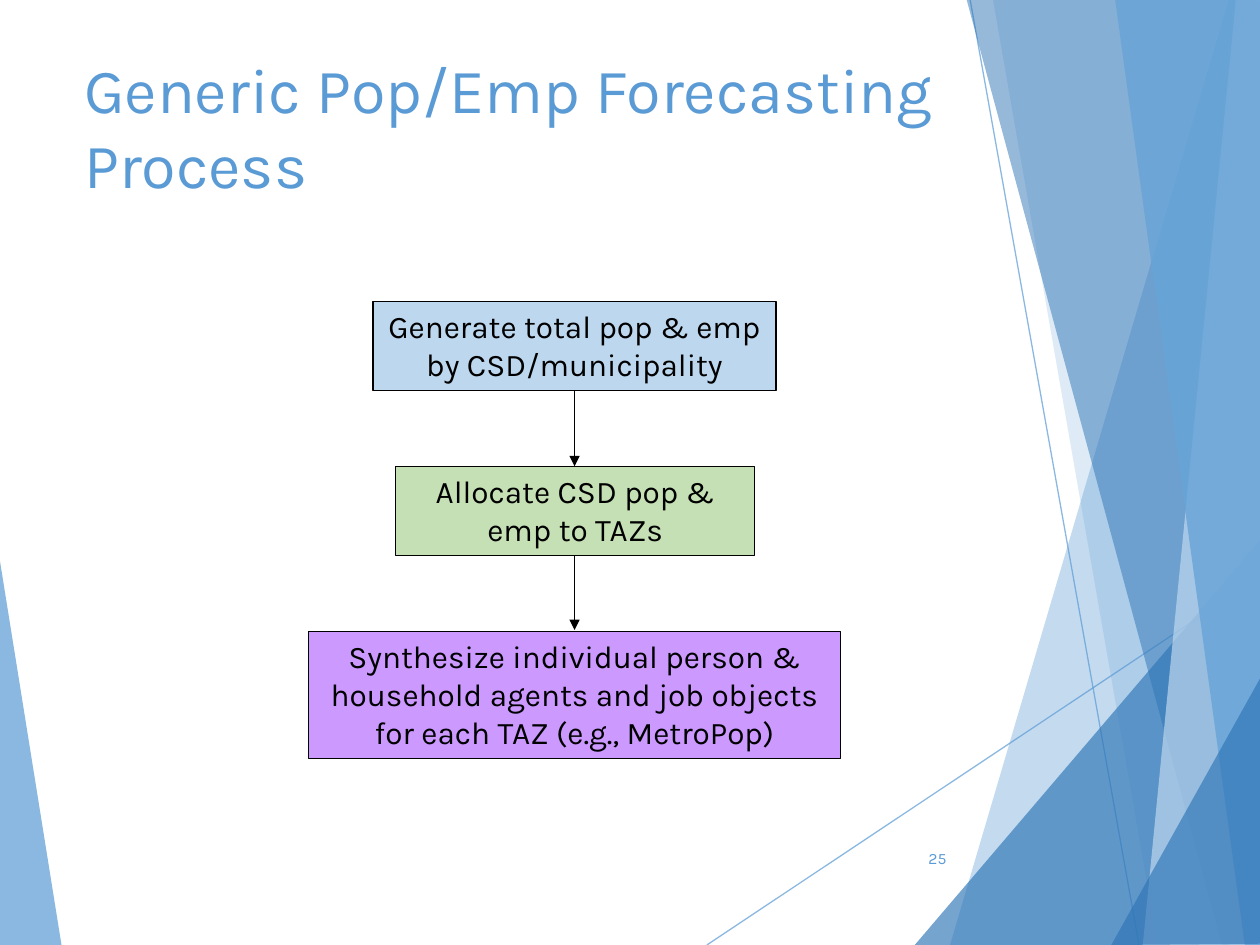
from pptx import Presentation
from pptx.dml.color import RGBColor
from pptx.enum.shapes import MSO_CONNECTOR as CONNECTOR, MSO_SHAPE as SHAPE
from pptx.enum.text import MSO_ANCHOR as ANCHOR, PP_ALIGN as ALIGN
from pptx.oxml.ns import qn
from pptx.util import Pt
from lxml.etree import SubElement

PX = 9144
BLUE, NAVY, PALE, SKY, BLACK = "5B9BD5", "2E75B6", "BDD7EE", "68A4D8", "000000"


def paint(fill, color, opacity=100):
    fill.solid()
    fill.fore_color.rgb = RGBColor.from_string(color)
    if opacity < 100:
        element = fill._xPr.find(qn("a:solidFill"))[0]
        SubElement(element, qn("a:alpha"), val=str(opacity * 1000))


def write(shape, text, size, color=BLUE, align=ALIGN.LEFT, anchor=ANCHOR.TOP):
    frame = shape.text_frame
    frame.word_wrap = True
    frame.vertical_anchor = anchor
    paragraph = frame.paragraphs[0]
    paragraph.text = text
    paragraph.alignment = align
    paragraph.font.name = "Karla"
    paragraph.font.size = Pt(size)
    paint(paragraph.font.fill, color)


presentation = Presentation()
presentation.slide_width = 1000 * PX
presentation.slide_height = 750 * PX
slide = presentation.slides.add_slide(presentation.slide_layouts[6])
shapes = slide.shapes

lines = [
    ((561, 750), (1001, 457), BLUE, 0.75, 70, False),
    ((770, 0), (904, 750), BLUE, 0.75, 70, False),
    ((456, 310), (456, 370), BLACK, 1, 100, True),
    ((456, 440), (456, 500), BLACK, 1, 100, True),
]
for start, end, color, width, opacity, arrow in lines:
    connector = shapes.add_connector(
        CONNECTOR.STRAIGHT, *(value * PX for value in start + end))
    connector.line.width = Pt(width)
    paint(connector.line.fill, color, opacity)
    if arrow:
        SubElement(connector.line._get_or_add_ln(), qn("a:tailEnd"), type="triangle")
    SubElement(connector._element.spPr, qn("a:effectLst"))

facets = [
    ([(-1, 439), (49, 751), (-1, 750)], BLUE, 70),
    ([(975, 0), (754, 750), (1002, 751), (1001, 1)], BLUE, 36),
    ([(788, -1), (919, 750), (1001, 750), (1001, -1)], BLUE, 20),
    ([(726, 750), (1000, 429), (1001, 750)], NAVY, 66),
    ([(767, -1), (970, 750), (1001, 749), (1001, -1)], NAVY, 50),
    ([(981, -1), (907, 750), (1001, 750), (1000, -1)], PALE, 70),
    ([(885, -1), (988, 750), (1002, 750), (1000, -1)], SKY, 82),
    ([(882, 750), (1002, 535), (1002, 749)], NAVY, 66),
]
for points, color, opacity in facets:
    builder = shapes.build_freeform(*points[0], scale=PX)
    builder.add_line_segments(points[1:], close=True)
    facet = builder.convert_to_shape()
    facet.shadow.inherit = False
    facet.line.fill.background()
    paint(facet.fill, color, opacity)

title = shapes.add_textbox(57 * PX, 35 * PX, 694 * PX, 144 * PX)
write(title, "Generic Pop/Emp Forecasting Process", 36)
number = shapes.add_textbox(705 * PX, 661 * PX, 56 * PX, 40 * PX)
write(number, "25", 9, align=ALIGN.RIGHT, anchor=ANCHOR.MIDDLE)

steps = [
    (296, 239, 320, 71, PALE, "Generate total pop & emp by CSD/municipality"),
    (314, 370, 285, 71, "C5E0B4", "Allocate CSD pop & emp to TAZs"),
    (245, 501, 422, 101, "CC99FF",
     "Synthesize individual person & household agents and job objects "
     "for each TAZ (e.g., MetroPop)"),
]
for left, top, width, height, color, text in steps:
    step = shapes.add_shape(
        SHAPE.RECTANGLE, left * PX, top * PX, width * PX, height * PX)
    step.shadow.inherit = False
    paint(step.fill, color)
    paint(step.line.fill, BLACK)
    step.line.width = Pt(0.75)
    write(step, text, 18, color=BLACK, align=ALIGN.CENTER)

presentation.save("out.pptx")
